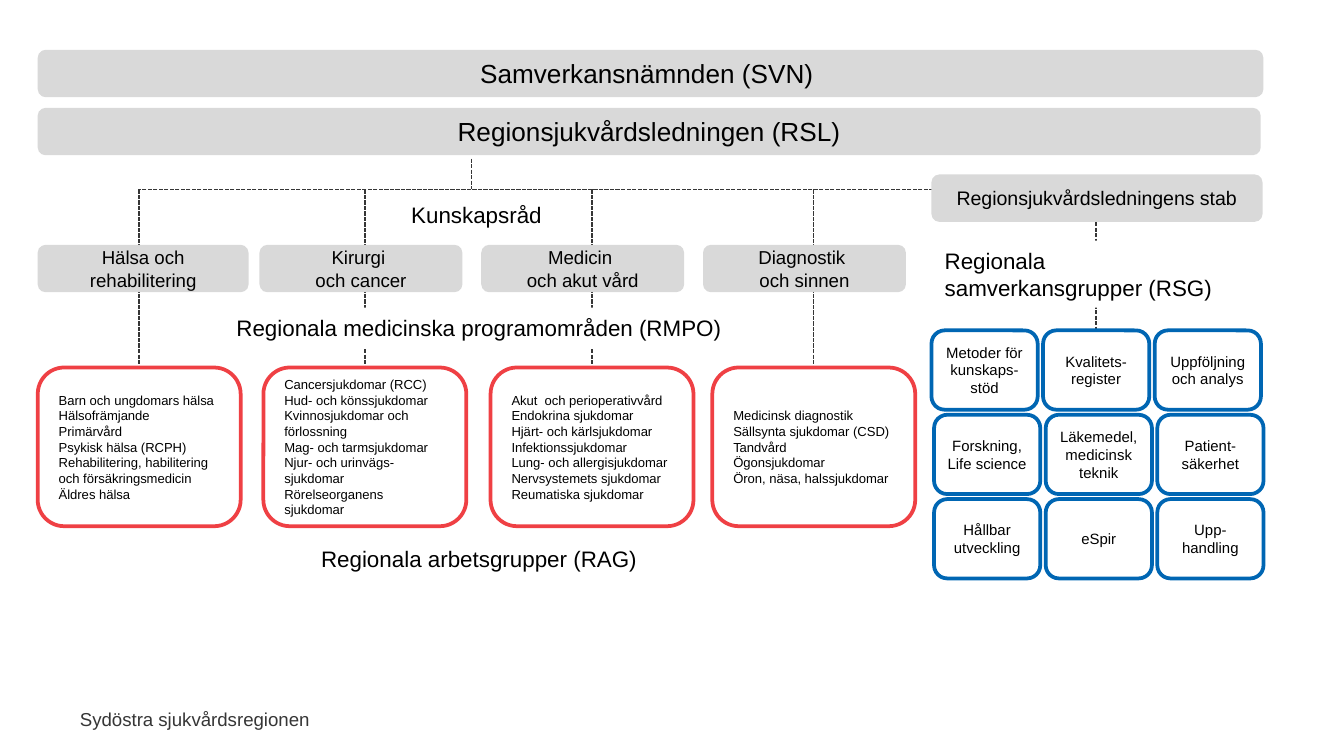
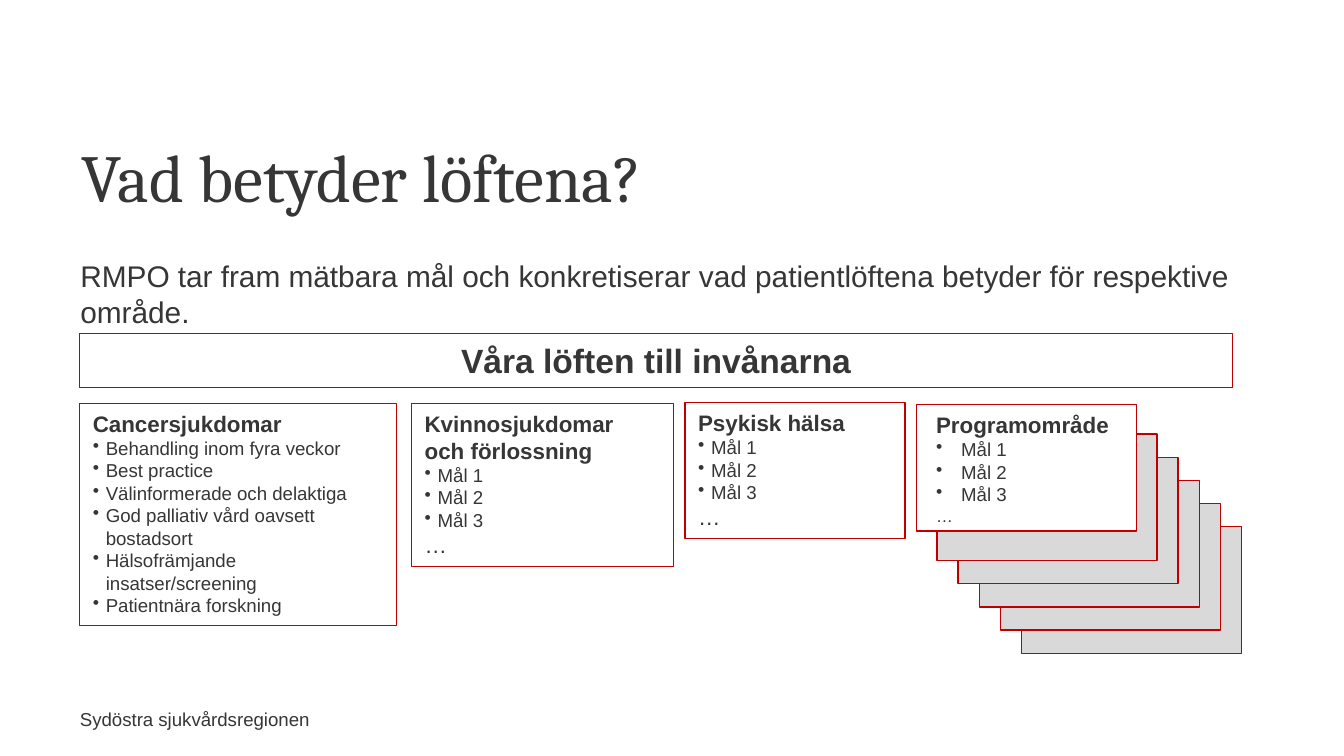
from lxml.etree import SubElement
from pptx import Presentation
from pptx.dml.color import RGBColor
from pptx.enum.dml import MSO_LINE
from pptx.enum.shapes import MSO_CONNECTOR, MSO_SHAPE
from pptx.enum.text import MSO_ANCHOR, PP_ALIGN
from pptx.oxml.ns import qn
from pptx.util import Pt

COLORS = {"ink": "363636", "black": "000000", "white": "FFFFFF", "grey": "D9D9D9",
          "blue": "0066B3", "red": "EF4044", "dark_red": "C00000"}
FOOTER = "Sydöstra sjukvårdsregionen"
LEFT, CENTER, RIGHT = PP_ALIGN.LEFT, PP_ALIGN.CENTER, PP_ALIGN.RIGHT

# Organisation chart: (text, box, size)
BARS = [
    ("Samverkansnämnden (SVN) ", (20.2, 26.7, 656.6, 25.4), 14),
    ("Regionsjukvårdsledningen (RSL)", (20.2, 57.8, 655.2, 25.4), 14),
    ("Regionsjukvårdsledningens stab", (499, 93.5, 177.4, 25.4), 10.5),
]
LABELS = [
    ("Kunskapsråd", (20.2, 104.4, 470.2, 21.6), CENTER, None),
    ("Regionala samverkansgrupper (RSG)", (499, 128.9, 175.7, 36), LEFT, "white"),
    ("Regionala medicinska programområden (RMPO)", (82.1, 164.9, 349.2, 21.6), CENTER, "white"),
    ("Regionala arbetsgrupper (RAG)", (82.1, 288.7, 349.2, 21.6), CENTER, "white"),
]
# (council, council width, left of programme box, programmes)
COUNCILS = [
    ("Hälsa och rehabilitering", 113, 20.2,
     ["Barn och ungdomars hälsa", "Hälsofrämjande", "Primärvård", "Psykisk hälsa (RCPH)",
      "Rehabilitering, habilitering och försäkringsmedicin", "Äldres hälsa"]),
    ("Kirurgi \noch cancer", 108.7, 141.1,
     ["Cancersjukdomar (RCC)", "Hud- och könssjukdomar", "Kvinnosjukdomar och förlossning",
      "Mag- och tarmsjukdomar", "Njur- och urinvägs-sjukdomar", "Rörelseorganens sjukdomar"]),
    ("Medicin \noch akut vård", 108.7, 262.8,
     ["Akut  och perioperativvård", "Endokrina sjukdomar", "Hjärt- och kärlsjukdomar",
      "Infektionssjukdomar", "Lung- och allergisjukdomar",
      "Nervsystemets sjukdomar\nReumatiska sjukdomar"]),
    ("Diagnostik \noch sinnen", 108.7, 381.6,
     ["Medicinsk diagnostik", "Sällsynta sjukdomar (CSD)\nTandvård", "Ögonsjukdomar",
      "Öron, näsa, halssjukdomar"]),
]
GROUPS = [
    ["Metoder för kunskaps-stöd", "Kvalitets-register", "Uppföljning och analys"],
    ["Forskning, Life science", "Läkemedel,\nmedicinsk teknik", "Patient-säkerhet"],
    ["Hållbar utveckling", "eSpir", "Upp-handling"],
]
BRANCH_Y, PROGRAMME_Y, PROGRAMME_W, PROGRAMME_H = 101.5, 196.9, 108.7, 85
STAFF_X = 587.2

# Promises
TITLE = "Vad betyder löftena?"
INTRO = ("RMPO tar fram mätbara mål och konkretiserar vad patientlöftena betyder "
         "för respektive område.")
PROMISE = "Våra löften till invånarna"
GOALS = ["Mål 1", "Mål 2", "Mål 3"]
# (heading, bullets, size of closing ellipsis, box, outline, hanging indent)
PANELS = [
    ("Cancersjukdomar",
     ["Behandling inom fyra veckor", "Best practice", "Välinformerade och delaktiga",
      "God palliativ vård oavsett bostadsort", "Hälsofrämjande insatser/screening",
      "Patientnära forskning"], None, (42.6, 216.1, 170, 119), "dark_red", 7),
    ("Kvinnosjukdomar \noch förlossning", GOALS, 12, (220.4, 216.1, 140.4, 87.3), "dark_red", 7),
    ("Psykisk hälsa", GOALS, 12, (366.9, 215.7, 117.9, 72.8), "dark_red", 7),
    ("Programområde", GOALS, 9, (494.4, 216.7, 108, 80), None, 13.5),
]
CARD_W, CARD_H = 117.9, 67.8
GREY_CARDS, GREY_X, GREY_Y, GREY_DX, GREY_DY = 5, 501.9, 232.6, 11.35, 12.4


def rgb(name):
    return RGBColor.from_string(COLORS[name])


def add_run(p, text, size, color, bold=False, font="Arial"):
    """Add text to a paragraph, one run per line."""
    for i, line in enumerate(text.split("\n")):
        if i:
            p.add_line_break()
        r = p.add_run()
        r.text = line
        r.font.name, r.font.size, r.font.bold = font, Pt(size), bold
        r.font.color.rgb = rgb(color)


def add_bullet(p, indent):
    pPr = p._p.get_or_add_pPr()
    pPr.set("marL", str(Pt(indent)))
    pPr.set("indent", str(-Pt(indent)))
    SubElement(pPr, qn("a:buChar")).set("char", "•")


def add_box(s, box, fill=None, line=None, width=0.75, shape=MSO_SHAPE.RECTANGLE):
    sp = s.shapes.add_shape(shape, *map(Pt, box))
    sp.shadow.inherit = False
    if fill:
        sp.fill.solid()
        sp.fill.fore_color.rgb = rgb(fill)
    else:
        sp.fill.background()
    if line:
        sp.line.color.rgb = rgb(line)
        sp.line.width = Pt(width)
    else:
        sp.line.fill.background()
    return sp


def write(sp, paragraphs, align=LEFT, anchor=MSO_ANCHOR.TOP, inset=None):
    """Fill a shape; a paragraph is (text, size, color, bold, bullet indent, font), last three optional."""
    tf = sp.text_frame
    tf.word_wrap = True
    tf.vertical_anchor = anchor
    if inset is not None:
        tf.margin_left = tf.margin_right = tf.margin_top = tf.margin_bottom = Pt(inset)
    for i, (text, size, color, *more) in enumerate(paragraphs):
        bold, indent, font = (*more, *(False, None, "Arial")[len(more):])
        p = tf.add_paragraph() if i else tf.paragraphs[0]
        p.alignment = align
        if indent:
            add_bullet(p, indent)
        add_run(p, text, size, color, bold, font)


def add_text(s, box, *paragraphs, **layout):
    sp = s.shapes.add_textbox(*map(Pt, box))
    write(sp, paragraphs, **layout)
    return sp


def add_dashed(s, x1, y1, x2, y2):
    c = s.shapes.add_connector(MSO_CONNECTOR.STRAIGHT, Pt(x1), Pt(y1), Pt(x2), Pt(y2))
    c.line.color.rgb = rgb("ink")
    c.line.width = Pt(0.75)
    c.line.dash_style = MSO_LINE.SQUARE_DOT
    SubElement(c._element.spPr, qn("a:effectLst"))


def add_rounded(s, box, paragraphs, fill, line=None, align=CENTER, inset=None):
    sp = add_box(s, box, fill, line, 2, MSO_SHAPE.ROUNDED_RECTANGLE)
    write(sp, paragraphs, align, MSO_ANCHOR.MIDDLE, inset)


def new_slide(prs):
    s = prs.slides.add_slide(prs.slide_layouts[6])
    footer = add_text(s, (34.6, 375.8, 138.2, 19.4), (FOOTER, 10, "ink"), align=RIGHT)
    footer.text_frame.word_wrap = False
    return s


def organisation_slide(prs):
    s = new_slide(prs)
    centers = [left + PROGRAMME_W / 2 for _, _, left, _ in COUNCILS]
    for x in centers:
        add_dashed(s, x, BRANCH_Y, x, PROGRAMME_Y)
    add_dashed(s, 252.7, 85, 252.7, BRANCH_Y)
    add_dashed(s, 500, BRANCH_Y, centers[0], BRANCH_Y)
    add_dashed(s, STAFF_X, 119, STAFF_X, 177)

    for text, box, size in BARS:
        add_rounded(s, box, [(text, size, "black")], "grey")
    for i, (council, width, left, programmes) in enumerate(COUNCILS):
        add_rounded(s, (20.2 + 118.8 * i, 131.2, width, 25.4), [(council, 10, "black")], "grey")
        add_rounded(s, (left, PROGRAMME_Y, PROGRAMME_W, PROGRAMME_H),
                    [(name, 7, "black") for name in programmes], "white", "red", LEFT)
    for row, names in enumerate(GROUPS):
        for col, name in enumerate(names):
            left = 499 + 59.8 * col + (1.4 if row else 0)
            add_rounded(s, (left, 177 + 45.2 * row, 56.9, 42.5),
                        [(part, 8, "black") for part in name.split("\n")],
                        "white", "blue", inset=2.9)
    for text, box, align, fill in LABELS:
        write(add_box(s, box, fill), [(text, 12, "black")], align)


def promises_slide(prs):
    s = new_slide(prs)
    add_text(s, (36.7, 60.5, 648, 67.7), (TITLE, 36, "ink", False, None, "Cambria"),
             anchor=MSO_ANCHOR.MIDDLE)
    add_text(s, (36, 134.6, 648, 221), (INTRO, 16, "ink"))

    for i in reversed(range(GREY_CARDS)):
        add_box(s, (GREY_X + GREY_DX * i, GREY_Y + GREY_DY * i, CARD_W, CARD_H),
                "grey", "dark_red")
    add_box(s, (491, 216.7, CARD_W, CARD_H), "white", "dark_red")

    write(add_box(s, (42.6, 178.6, 617.8, 29), None, "dark_red"),
          [(PROMISE, 18, "ink", True)], CENTER)
    for heading, bullets, ellipsis_size, box, line, indent in PANELS:
        paragraphs = [(heading, 12, "ink", True)]
        paragraphs += [(b, 10, "ink", False, indent) for b in bullets]
        if ellipsis_size:
            paragraphs.append(("…", ellipsis_size, "ink"))
        write(add_box(s, box, None, line), paragraphs)


def main():
    prs = Presentation()
    prs.slide_width, prs.slide_height = Pt(720), Pt(405)
    organisation_slide(prs)
    promises_slide(prs)
    prs.save("out.pptx")


if __name__ == "__main__":
    main()
